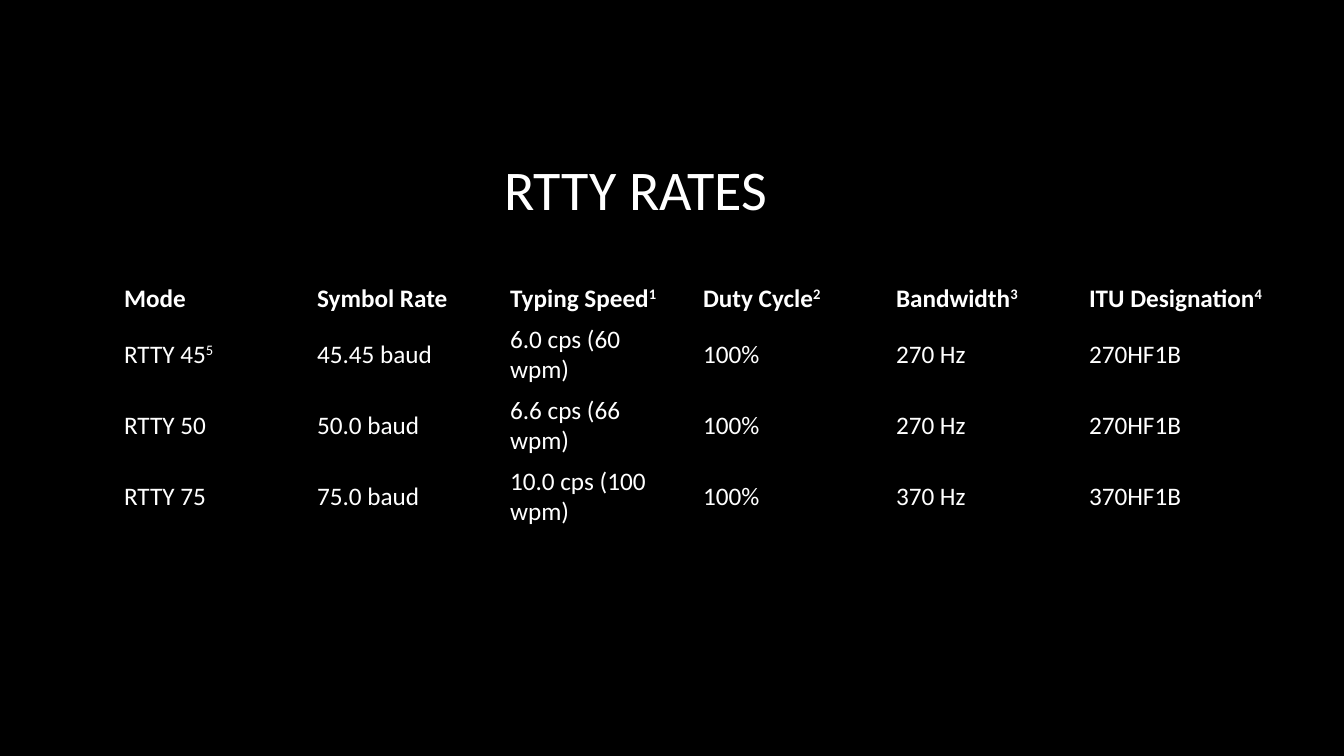
from pptx import Presentation
from pptx.dml.color import RGBColor
from pptx.enum.text import MSO_ANCHOR as Anchor, MSO_AUTO_SIZE as AutoSize, PP_ALIGN as Align
from pptx.util import Pt

PX = 12192000 / 1344
BLACK = RGBColor(0, 0, 0)
WHITE = RGBColor(255, 255, 255)
FONT = "Calibri"
NO_GRID_STYLE = "{2D5ABB26-0587-4C30-8999-92F81FD0307C}"


def px(*lengths):
    return [round(length * PX) for length in lengths]


def style_run(span, size, bold=False):
    span.font.name = FONT
    span.font.size = Pt(size)
    span.font.bold = bold
    span.font.color.rgb = WHITE


deck = Presentation()
deck.slide_width, deck.slide_height = px(1344, 756)
page = deck.slides.add_slide(deck.slide_layouts[5])
page.background.fill.solid()
page.background.fill.fore_color.rgb = BLACK

title = page.shapes.title
title.left, title.top, title.width, title.height = px(494, 149, 323, 77)
title_frame = title.text_frame
title_frame.text = "RTTY RATES"
title_frame.word_wrap = True
title_frame.auto_size = AutoSize.SHAPE_TO_FIT_TEXT
title_frame.vertical_anchor = Anchor.TOP
title_frame.paragraphs[0].alignment = Align.LEFT
style_run(title_frame.paragraphs[0].runs[0], 40)

rates = [
    ["Mode", "Symbol Rate", "Typing Speed^1", "Duty Cycle^2", "Bandwidth^3", "ITU Designation^4"],
    ["RTTY 45^5", "45.45 baud", "6.0 cps (60 wpm)", "100%", "270 Hz", "270HF1B"],
    ["RTTY 50", "50.0 baud", "6.6 cps (66 wpm)", "100%", "270 Hz", "270HF1B"],
    ["RTTY 75", "75.0 baud", "10.0 cps (100 wpm)", "100%", "370 Hz", "370HF1B"],
]
column_widths = px(193, 193, 193, 193, 193, 194)
row_heights = px(41, 71, 71, 71)

frame = page.shapes.add_table(len(rates), len(column_widths), *px(114, 278, 1159, 254))
table = frame.table
table.horz_banding = False
table._tbl.tblPr.find("{*}tableStyleId").text = NO_GRID_STYLE
for column, width in zip(table.columns, column_widths):
    column.width = width
for row, height in zip(table.rows, row_heights):
    row.height = height

for row_index, values in enumerate(rates):
    for column_index, value in enumerate(values):
        cell = table.cell(row_index, column_index)
        cell.fill.background()
        cell.vertical_anchor = Anchor.MIDDLE
        label, _, footnote = value.partition("^")
        para = cell.text_frame.paragraphs[0]
        para.text = label
        if footnote:
            mark = para.add_run()
            mark.text = footnote
            mark._r.get_or_add_rPr().set("baseline", "30000")
        for span in para.runs:
            style_run(span, 18, bold=row_index == 0)

deck.save("out.pptx")
